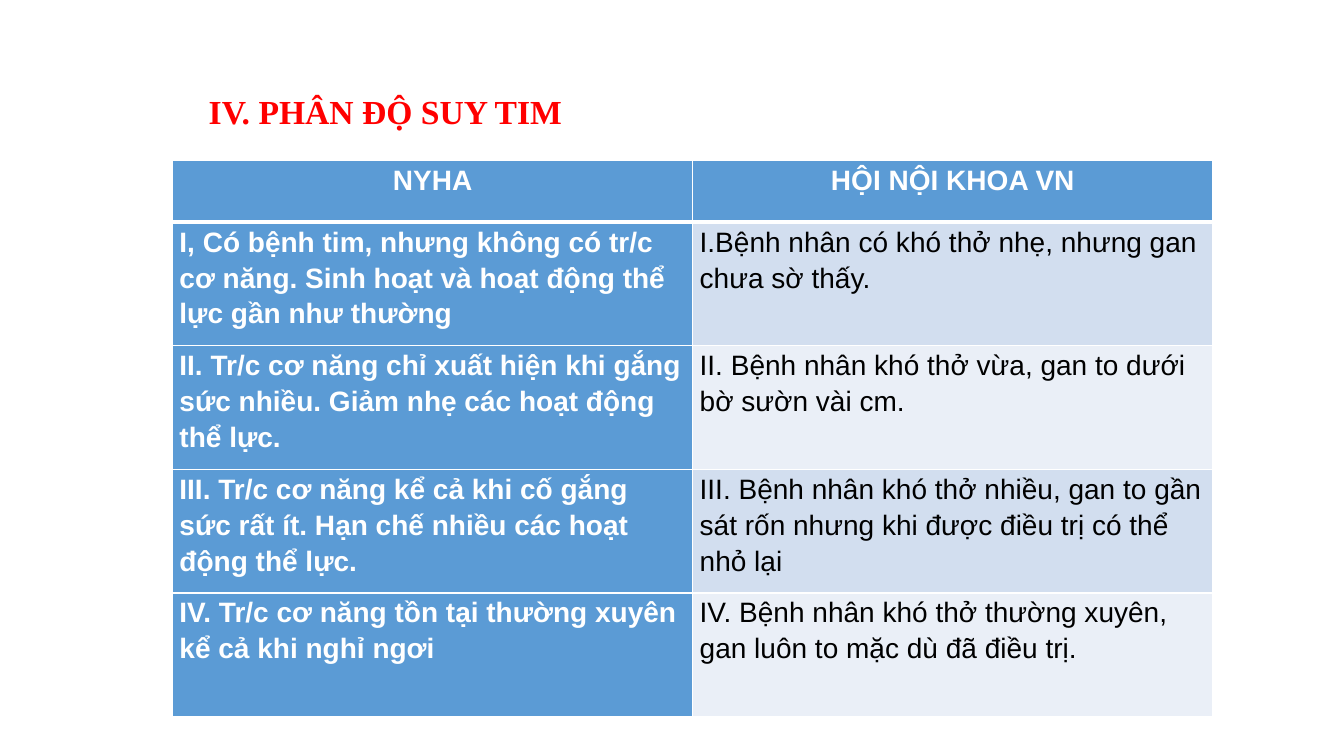
from lxml.etree import SubElement
from pptx import Presentation
from pptx.dml.color import RGBColor
from pptx.enum.text import MSO_ANCHOR, MSO_AUTO_SIZE, PP_ALIGN
from pptx.oxml.ns import qn
from pptx.util import Inches, Pt

COLORS = {"title": "FF0000", "head": "5B9BD5", "odd": "D2DEEF", "even": "EAEFF7",
          "light": "FFFFFF", "dark": "000000"}

GRADES = [
    ("NYHA", "HỘI NỘI KHOA VN"),
    ("I, Có bệnh tim, nhưng không có tr/c cơ năng. Sinh hoạt và hoạt động thể lực gần như thường",
     "I.Bệnh nhân có khó thở nhẹ, nhưng gan chưa sờ thấy."),
    ("II. Tr/c cơ năng chỉ xuất hiện khi gắng sức nhiều. Giảm nhẹ các hoạt động thể lực.",
     "II. Bệnh nhân khó thở vừa, gan to dưới bờ sườn vài cm."),
    ("III. Tr/c cơ năng kể cả khi cố gắng sức rất ít. Hạn chế nhiều các hoạt động thể lực.",
     "III. Bệnh nhân khó thở nhiều, gan to gần sát rốn nhưng khi được điều trị có thể nhỏ lại"),
    ("IV. Tr/c cơ năng tồn tại thường xuyên kể cả khi nghỉ ngơi",
     "IV. Bệnh nhân khó thở thường xuyên, gan luôn to mặc dù đã điều trị."),
]


class GradingSlide:
    """Slide with its style, placed in hundredths of the slide's width and height."""

    def __init__(self, deck):
        self.column = deck.slide_width / 100
        self.row = deck.slide_height / 100
        self.slide = deck.slides.add_slide(deck.slide_layouts[5])

    def place(self, left, top, width, height):
        return (round(left * self.column), round(top * self.row),
                round(width * self.column), round(height * self.row))

    def add_words(self, paragraph, words, font, size, color, bold, spacing, align=PP_ALIGN.LEFT):
        paragraph.alignment = align
        paragraph.line_spacing = spacing
        run = paragraph.add_run()
        run.text = words
        run.font.name = font
        run.font.size = Pt(size)
        run.font.bold = bold
        run.font.color.rgb = RGBColor.from_string(COLORS[color])

    def title(self, words, *box):
        heading = self.slide.shapes.title
        heading.left, heading.top, heading.width, heading.height = self.place(*box)
        frame = heading.text_frame
        frame.auto_size = MSO_AUTO_SIZE.NONE
        frame.vertical_anchor = MSO_ANCHOR.MIDDLE
        self.add_words(frame.paragraphs[0], words, "Times New Roman", 24, "title", True, 0.9)

    def border(self, cell, **widths):
        properties = cell._tc.get_or_add_tcPr()
        for side in "LRTB":
            line = SubElement(properties, qn(f"a:ln{side}"), w=str(Pt(widths.get(side, 1))))
            fill = SubElement(line, qn("a:solidFill"))
            SubElement(fill, qn("a:srgbClr"), val=COLORS["light"])

    def cell(self, cell, words, level, side):
        header, emphasis = level == 0, level == 0 or side == 0
        cell.margin_left = cell.margin_right = Inches(0.07)
        cell.margin_top = cell.margin_bottom = 0
        self.border(cell, T=3 if level == 1 else 1, B=3 if header else 1)
        cell.fill.solid()
        shade = "head" if emphasis else "odd" if level % 2 else "even"
        cell.fill.fore_color.rgb = RGBColor.from_string(COLORS[shade])
        self.add_words(cell.text_frame.paragraphs[0], words, "Arial", 20,
                       "light" if emphasis else "dark", emphasis, 1.15,
                       PP_ALIGN.CENTER if header else PP_ALIGN.LEFT)

    def table(self, rows, *box):
        frame = self.slide.shapes.add_table(len(rows), len(rows[0]), *self.place(*box))
        grid = frame.table
        half_row = frame.height / (2 * len(rows) - 1)
        for level, texts in enumerate(rows):
            grid.rows[level].height = round(half_row * (2 if level else 1))
            for side, words in enumerate(texts):
                self.cell(grid.cell(level, side), words, level, side)


def main():
    deck = Presentation()
    deck.slide_width, deck.slide_height = Inches(13.33), Inches(7.5)
    grading = GradingSlide(deck)
    grading.title("IV. PHÂN ĐỘ SUY TIM", 14.78, 5.33, 78.32, 19.33)
    grading.table(GRADES, 12.83, 21.2, 77.42, 73.6)
    deck.save("out.pptx")


if __name__ == "__main__":
    main()
